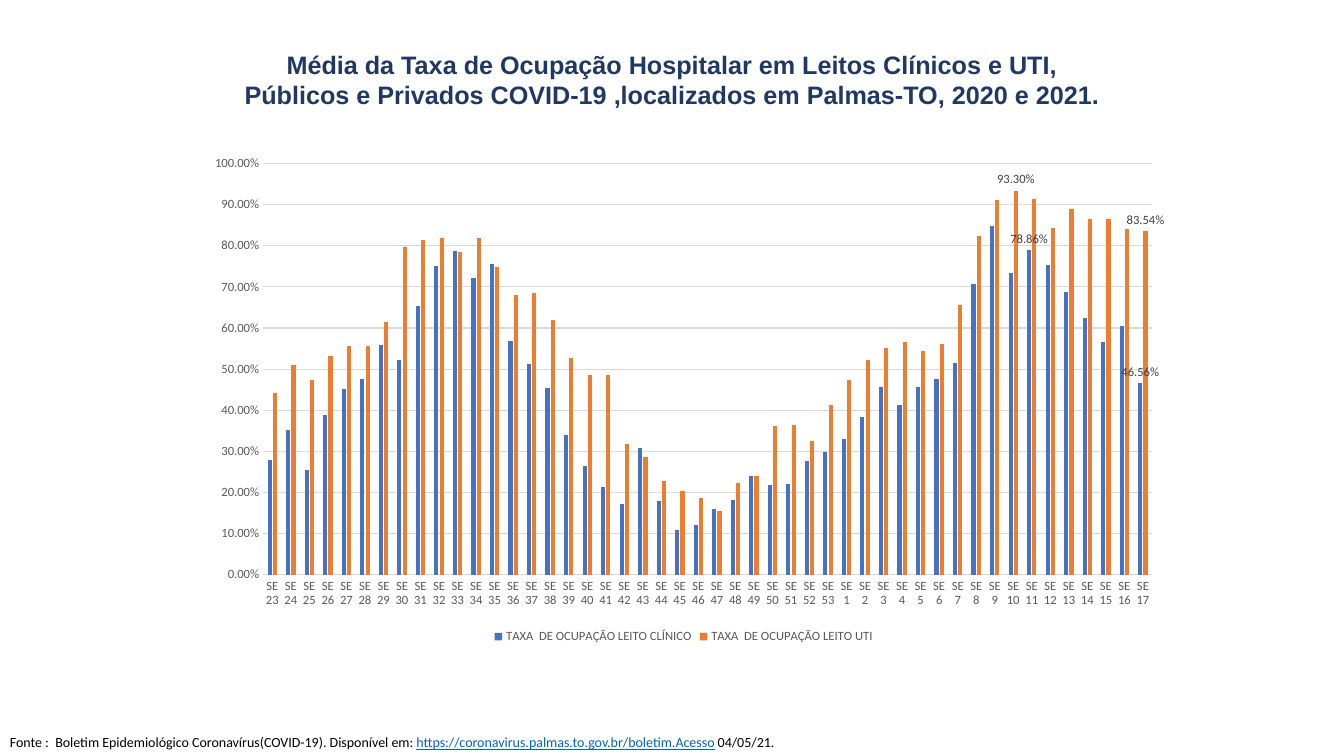
import pptx
import pptx.util
import pptx.chart.data
import pptx.dml.color
import pptx.enum.chart
import pptx.enum.text

Inches = pptx.util.Inches
Pt = pptx.util.Pt
Chart = pptx.enum.chart
Text = pptx.enum.text

COLORS = {
    "title": "203864", "text": "000000", "link": "0563C1", "axis": "595959",
    "label": "404040", "grid": "D9D9D9", "ward": "4472C4", "icu": "ED7D31",
}

WEEKS = [f"SE {n}" for n in [*range(23, 54), *range(1, 18)]]

WARD = [
    0.28, 0.3523, 0.2535, 0.3895, 0.4522, 0.4756, 0.5596, 0.5219,
    0.6523, 0.75, 0.7867, 0.7221, 0.7563, 0.5687, 0.513, 0.4533,
    0.3404, 0.2641, 0.2141, 0.1724, 0.3076, 0.1799, 0.1077, 0.1206,
    0.1595, 0.1807, 0.2406, 0.2186, 0.2216, 0.2773, 0.299, 0.3303,
    0.3826, 0.4563, 0.4126, 0.4567, 0.4754, 0.5153, 0.7064, 0.8479,
    0.7329, 0.7886, 0.7544, 0.6863, 0.6247, 0.5664, 0.6057, 0.4656,
]
ICU = [
    0.4418, 0.5091, 0.4735, 0.5314, 0.557, 0.557, 0.6149, 0.7977,
    0.8143, 0.82, 0.7847, 0.8197, 0.7481, 0.6791, 0.6847, 0.6196,
    0.5269, 0.4856, 0.4856, 0.3174, 0.2859, 0.227, 0.2034, 0.186,
    0.1555, 0.222, 0.2411, 0.3616, 0.3636, 0.3253, 0.413, 0.4731,
    0.5213, 0.5513, 0.5656, 0.544, 0.5601, 0.656, 0.8247, 0.9101,
    0.933, 0.9141, 0.8433, 0.8891, 0.8647, 0.8659, 0.8416, 0.8354,
]

# Name, values, colour and the weeks that carry a label
SERIES = [
    ("TAXA  DE OCUPAÇÃO LEITO CLÍNICO", WARD, "ward", ("SE 11", "SE 17")),
    ("TAXA  DE OCUPAÇÃO LEITO UTI", ICU, "icu", ("SE 10", "SE 17")),
]


def put(thing, **values):
    for name, value in values.items():
        setattr(thing, name, value)


def tint(name):
    return pptx.dml.color.RGBColor.from_string(COLORS[name])


def style(font, size, color, name="Calibri", **more):
    put(font, size=Pt(size), name=name, **more)
    font.color.rgb = tint(color)


def rule(line):
    line.color.rgb = tint("grid")
    line.width = Pt(0.75)


def add_title(slide, left, top, width, height):
    title = slide.shapes.title
    put(title, left=left, top=top, width=width, height=height)
    frame = title.text_frame
    put(frame, word_wrap=True, auto_size=Text.MSO_AUTO_SIZE.NONE,
        vertical_anchor=Text.MSO_ANCHOR.TOP)
    par = frame.paragraphs[0]
    put(par, alignment=Text.PP_ALIGN.CENTER, line_spacing=1.0)
    run = par.add_run()
    run.text = ("Média da Taxa de Ocupação Hospitalar em Leitos Clínicos e UTI, "
                "Públicos e Privados COVID-19 ,localizados em Palmas-TO, 2020 e 2021.")
    style(run.font, 18, "title", "Arial", bold=True)


def add_rates(slide, left, top, width, height):
    data = pptx.chart.data.CategoryChartData(number_format="0.00%")
    data.categories = WEEKS
    for name, rates, _, _ in SERIES:
        data.add_series(name, rates)
    chart = slide.shapes.add_chart(
        Chart.XL_CHART_TYPE.COLUMN_CLUSTERED, left, top, width, height, data).chart
    put(chart, has_title=False, has_legend=True)
    style(chart.font, 10, "text")
    put(chart.legend, position=Chart.XL_LEGEND_POSITION.BOTTOM,
        include_in_layout=False)
    style(chart.legend.font, 9, "axis")

    # Axes and grid
    weeks, rates = chart.category_axis, chart.value_axis
    for axis in (weeks, rates):
        put(axis, major_tick_mark=Chart.XL_TICK_MARK.NONE,
            minor_tick_mark=Chart.XL_TICK_MARK.NONE)
        style(axis.tick_labels.font, 9, "axis")
    rule(weeks.format.line)
    put(rates, minimum_scale=0, maximum_scale=1, major_unit=0.1,
        has_major_gridlines=True)
    put(rates.tick_labels, number_format="0.00%", number_format_is_linked=False)
    rates.format.line.fill.background()
    rule(rates.major_gridlines.format.line)

    # Columns and their few labels
    plot = chart.plots[0]
    put(plot, gap_width=219, overlap=-27, vary_by_categories=False)
    for bars, (_, _, color, marked) in zip(plot.series, SERIES):
        bars.format.fill.solid()
        bars.format.fill.fore_color.rgb = tint(color)
        bars.invert_if_negative = False
        bars.data_labels.show_value = False
        for week in marked:
            label = bars.points[WEEKS.index(week)].data_label
            label.position = Chart.XL_LABEL_POSITION.OUTSIDE_END
            style(label.font, 9, "label")


def add_source(slide, left, top, width, height):
    frame = slide.shapes.add_textbox(left, top, width, height).text_frame
    put(frame, word_wrap=True, auto_size=Text.MSO_AUTO_SIZE.SHAPE_TO_FIT_TEXT)
    parts = [
        ("Fonte :  Boletim Epidemiológico Coronavírus(COVID-19). Disponível em: ",
         "text", False),
        ("https://coronavirus.palmas.to.gov.br/boletim.Acesso", "link", True),
        (" 04/05/21.", "text", False),
    ]
    for words, color, under in parts:
        run = frame.paragraphs[0].add_run()
        run.text = words
        style(run.font, 10, color, underline=under)


def main():
    deck = pptx.Presentation()
    put(deck, slide_width=Inches(13.34), slide_height=Inches(7.5))
    slide = deck.slides.add_slide(deck.slide_layouts.get_by_name("Title Only"))
    add_source(slide, Inches(0), Inches(7.23), Inches(9.2), Inches(0.27))
    add_title(slide, Inches(2.26), Inches(0.44), Inches(8.82), Inches(1.01))
    add_rates(slide, Inches(1.94), Inches(1.45), Inches(9.69), Inches(4.98))
    deck.save("out.pptx")


if __name__ == "__main__":
    main()
